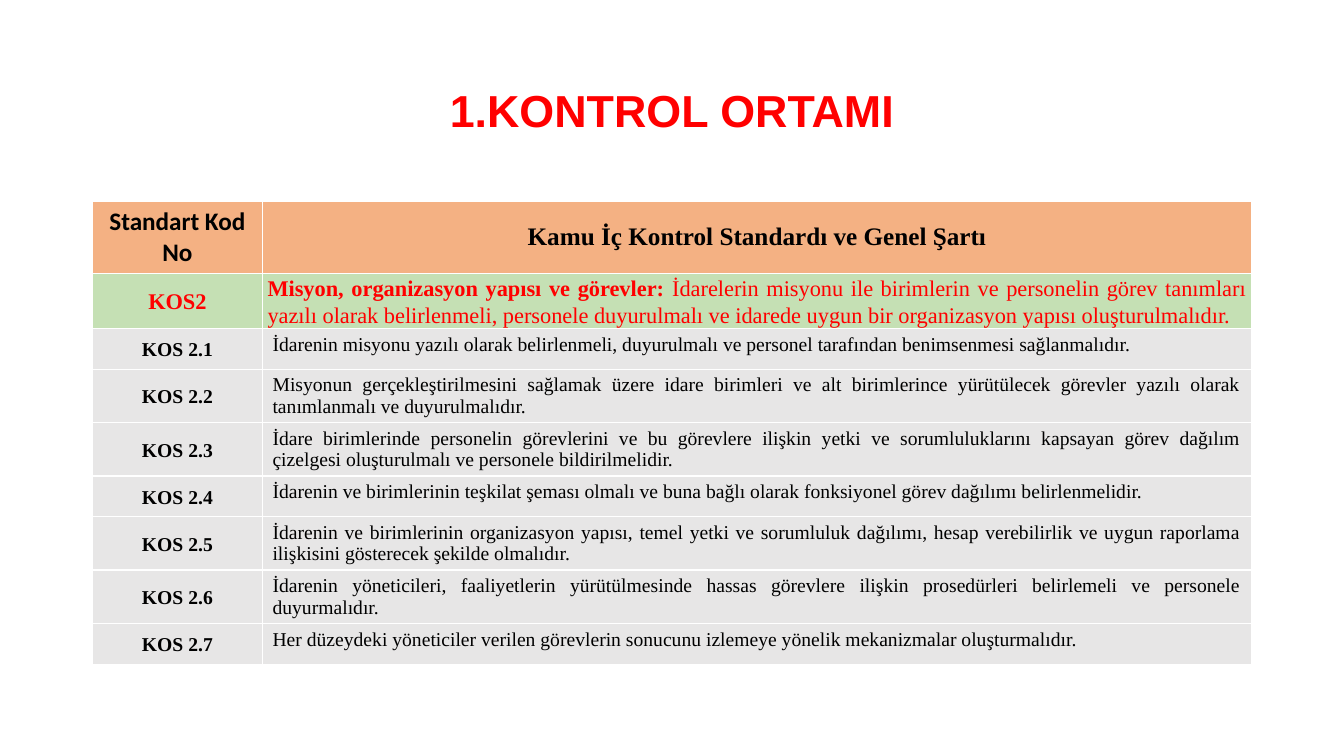
from pptx import Presentation
from pptx.dml.color import RGBColor
from pptx.enum.text import MSO_ANCHOR, PP_ALIGN
from pptx.util import Pt


def color(value):
    return RGBColor.from_string(value)


def add_run(p, text, name, size, bold, rgb):
    r = p.add_run()
    r.text = text
    for key, value in {"name": name, "size": Pt(size), "bold": bold}.items():
        setattr(r.font, key, value)
    r.font.color.rgb = color(rgb)


SERIF = "Times New Roman"
RED, BLACK = "FF0000", "000000"
ORANGE, GREEN, GRAY = "F4B183", "C5E0B4", "E7E6E6"

requirements = [
    (29, "İdarenin misyonu yazılı olarak belirlenmeli, duyurulmalı ve personel tarafından benimsenmesi sağlanmalıdır."),
    (38, "Misyonun gerçekleştirilmesini sağlamak üzere idare birimleri ve alt birimlerince yürütülecek görevler yazılı olarak tanımlanmalı ve duyurulmalıdır."),
    (38, "İdare birimlerinde personelin görevlerini ve bu görevlere ilişkin yetki ve sorumluluklarını kapsayan görev dağılım çizelgesi oluşturulmalı ve personele bildirilmelidir."),
    (29, "İdarenin ve birimlerinin teşkilat şeması olmalı ve buna bağlı olarak fonksiyonel görev dağılımı belirlenmelidir."),
    (38, "İdarenin ve birimlerinin organizasyon yapısı, temel yetki ve sorumluluk dağılımı, hesap verebilirlik ve uygun raporlama ilişkisini gösterecek şekilde olmalıdır."),
    (38, "İdarenin yöneticileri, faaliyetlerin yürütülmesinde hassas görevlere ilişkin prosedürleri belirlemeli ve personele duyurmalıdır."),
    (29, "Her düzeydeki yöneticiler verilen görevlerin sonucunu izlemeye yönelik mekanizmalar oluşturmalıdır."),
]

rows = [
    (50, ORANGE, 18, BLACK, "Standart Kod No", [("Kamu İç Kontrol Standardı ve Genel Şartı", True)]),
    (39.5, GREEN, 16, RED, "KOS2", [
        ("Misyon, organizasyon yapısı ve görevler: ", True),
        ("İdarelerin misyonu ile birimlerin ve personelin görev tanımları yazılı olarak belirlenmeli, personele duyurulmalı ve idarede uygun bir organizasyon yapısı oluşturulmalıdır.", False),
    ]),
]
for number, (height, text) in enumerate(requirements, 1):
    rows.append((height, GRAY, 14, BLACK, f"KOS 2.{number}", [(text, False)]))

prs = Presentation()
prs.slide_width, prs.slide_height = Pt(960), Pt(540)
s = prs.slides.add_slide(prs.slide_layouts[5])

title = s.shapes.title
for key, value in {"left": 66, "top": 28.8, "width": 828, "height": 104.4}.items():
    setattr(title, key, Pt(value))
tf = title.text_frame
tf.vertical_anchor = MSO_ANCHOR.MIDDLE
p = tf.paragraphs[0]
p.alignment = PP_ALIGN.CENTER
p.line_spacing = 0.9
add_run(p, "1.KONTROL ORTAMI", "Arial", 32, True, RED)

total = sum(row[0] for row in rows)
table = s.shapes.add_table(len(rows), 2, Pt(66), Pt(144), Pt(828), Pt(total)).table
table.horz_banding = False
table.columns[0].width, table.columns[1].width = Pt(121.5), Pt(706.5)

tight = {"margin_left": Pt(3.6), "margin_top": Pt(0.7), "margin_right": Pt(3.6), "margin_bottom": Pt(0)}
spaced = {"line_spacing": 1.07, "space_after": Pt(8)}

for i, (height, fill, size, rgb, code, runs) in enumerate(rows):
    table.rows[i].height = Pt(height)
    for j, parts in enumerate([[(code, True)], runs]):
        cell = table.cell(i, j)
        cell.fill.solid()
        cell.fill.fore_color.rgb = color(fill)
        p = cell.text_frame.paragraphs[0]
        p.alignment = PP_ALIGN.CENTER if i == 0 or j == 0 else PP_ALIGN.JUSTIFY
        if i < 2 or j == 0:
            cell.vertical_anchor = MSO_ANCHOR.MIDDLE
        if i == 1 or (i > 1 and j == 0):
            for key, value in tight.items():
                setattr(cell, key, value)
            for key, value in spaced.items():
                setattr(p, key, value)
        for text, bold in parts:
            add_run(p, text, "Calibri" if i == j == 0 else SERIF, size, bold, rgb)

prs.save("out.pptx")
